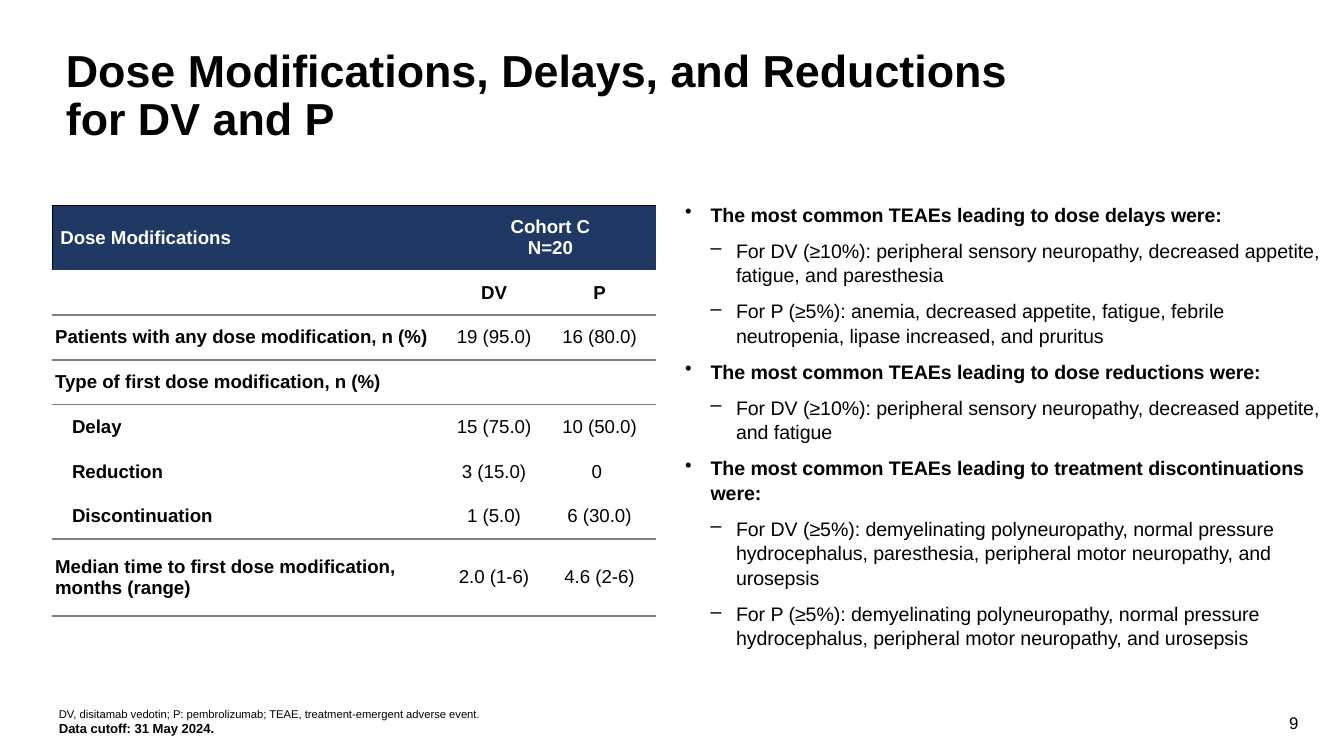
from dataclasses import dataclass

from lxml.etree import SubElement
from pptx import Presentation
from pptx.dml.color import RGBColor
from pptx.enum.text import MSO_ANCHOR, MSO_AUTO_SIZE, PP_ALIGN
from pptx.oxml.ns import qn
from pptx.util import Pt


@dataclass(frozen=True)
class Theme:
    """Colours, font and type sizes of the deck."""
    font: str = "Arial"
    text: str = "000000"
    light: str = "FFFFFF"
    header: str = "203864"
    rule: str = "808080"
    title_size: float = 24
    body_size: float = 10.5
    table_size: float = 10
    number_size: float = 9
    cutoff_size: float = 7
    note_size: float = 6


THEME = Theme()
PLAIN_STYLE = "{2D5ABB26-0587-4C30-8999-92F81FD0307C}"
TABLE_ROWS = [
    (" Dose Modifications", "Cohort C\nN=20", ""),
    ("", "DV", "P"),
    ("Patients with any dose modification, n (%)", "19 (95.0)", "16 (80.0)"),
    ("Type of first dose modification, n (%)", "", ""),
    ("Delay", "15 (75.0)", "10 (50.0)"),
    ("Reduction", "3 (15.0)", "0 "),
    ("Discontinuation", "1 (5.0)", "6 (30.0)"),
    ("Median time to first dose modification,\nmonths (range)", "2.0 (1-6)", "4.6 (2-6)"),
]
COLUMN_WIDTHS = (210.3, 52.6, 60.4)
ROW_HEIGHTS = (34.6, *[24] * 6, 41.2)
INDENTED_ROWS = (4, 5, 6)
RULED_ROWS = (1, 2, 6, 7)
FINDINGS = [
    ("The most common TEAEs leading to dose delays were:", [
        "For DV (≥10%): peripheral sensory neuropathy, decreased appetite, fatigue, and paresthesia",
        "For P (≥5%): anemia, decreased appetite, fatigue, febrile neutropenia, lipase increased, "
        "and pruritus",
    ]),
    ("The most common TEAEs leading to dose reductions were:", [
        "For DV (≥10%): peripheral sensory neuropathy, decreased appetite, and fatigue",
    ]),
    ("The most common TEAEs leading to treatment discontinuations were:", [
        "For DV (≥5%): demyelinating polyneuropathy, normal pressure hydrocephalus, paresthesia, "
        "peripheral motor neuropathy, and urosepsis",
        "For P (≥5%): demyelinating polyneuropathy, normal pressure hydrocephalus, "
        "peripheral motor neuropathy, and urosepsis",
    ]),
]


def write(para, text, *, size, color=THEME.text, bold=False, align=PP_ALIGN.LEFT):
    """Put formatted text into a paragraph."""
    para.text = text
    para.alignment = align
    for span in para.runs:
        span.font.name = THEME.font
        span.font.size = Pt(size)
        span.font.bold = bold
        span.font.color.rgb = RGBColor.from_string(color)


def next_para(frame):
    """Return the empty first paragraph of a frame, or a new one."""
    first = frame.paragraphs[0]
    return frame.add_paragraph() if first.runs else first


def add_box(page, left, top, width, height, anchor=MSO_ANCHOR.TOP):
    """Add a wrapping text box and return its text frame."""
    frame = page.shapes.add_textbox(Pt(left), Pt(top), Pt(width), Pt(height)).text_frame
    frame.word_wrap = True
    frame.vertical_anchor = anchor
    return frame


def set_title(page, text):
    """Place and fill the title placeholder."""
    title = page.shapes.title
    title.left, title.top, title.width, title.height = Pt(28.1), Pt(22.3), Pt(548), Pt(49.7)
    frame = title.text_frame
    frame.auto_size = MSO_AUTO_SIZE.NONE
    frame.vertical_anchor = MSO_ANCHOR.TOP
    write(frame.paragraphs[0], text, size=THEME.title_size, bold=True)
    frame.paragraphs[0].line_spacing = 0.9


def add_bullet(frame, text, *, level=0):
    """Add a bulleted paragraph at the given outline level."""
    para = next_para(frame)
    is_first = para is frame.paragraphs[0] or len(frame.paragraphs) == 1
    para.level = level
    properties = para._p.get_or_add_pPr()
    properties.set("marL", str(Pt(13.6 * (level + 1))))
    properties.set("indent", str(-Pt(13.6)))
    SubElement(properties, qn("a:buChar"), char="–" if level else "•")
    para.space_before = Pt(0 if is_first else 3)
    para.space_after = Pt(3)
    para.line_spacing = 1.05
    write(para, text, size=THEME.body_size, bold=level == 0)


def add_border(cell, side, color, width):
    """Draw one border of a cell; side is L, R, T or B."""
    line = SubElement(cell._tc.get_or_add_tcPr(), qn(f"a:ln{side}"), w=str(Pt(width)))
    SubElement(SubElement(line, qn("a:solidFill")), qn("a:srgbClr"), val=color)


def fill_cell(cell, text, row, column):
    """Write and format one table cell by its place in the grid."""
    is_header = row == 0
    cell.margin_left = cell.margin_right = Pt(1.5)
    cell.margin_top = cell.margin_bottom = 0
    cell.vertical_anchor = MSO_ANCHOR.MIDDLE
    if is_header:
        for side in ("LT", "T", "RT")[column]:
            add_border(cell, side, THEME.text, 0.5)
        cell.fill.solid()
        cell.fill.fore_color.rgb = RGBColor.from_string(THEME.header)
    else:
        if row - 1 in RULED_ROWS:
            add_border(cell, "T", THEME.rule, 1)
        if row in RULED_ROWS:
            add_border(cell, "B", THEME.rule, 1)
        cell.fill.background()
    lines = text.split("\n") if is_header else [text]
    for line in lines:
        para = next_para(cell.text_frame)
        write(para, line, size=THEME.table_size,
              color=THEME.light if is_header else THEME.text,
              bold=row < 2 or column == 0,
              align=PP_ALIGN.CENTER if column else PP_ALIGN.LEFT)
        if row in INDENTED_ROWS and column == 0:
            para._p.get_or_add_pPr().set("indent", str(Pt(9)))


def add_dose_table(page, left, top):
    """Add the dose modification table."""
    table = page.shapes.add_table(len(ROW_HEIGHTS), len(COLUMN_WIDTHS), Pt(left), Pt(top),
                                  Pt(sum(COLUMN_WIDTHS)), Pt(sum(ROW_HEIGHTS))).table
    table.first_row = table.horz_banding = False
    table._tbl.tblPr.find(qn("a:tableStyleId")).text = PLAIN_STYLE
    for column, width in zip(table.columns, COLUMN_WIDTHS):
        column.width = Pt(width)
    for row, height in zip(table.rows, ROW_HEIGHTS):
        row.height = Pt(height)
    table.cell(0, 1).merge(table.cell(0, 2))
    for row, texts in enumerate(TABLE_ROWS):
        for column, text in enumerate(texts):
            fill_cell(table.cell(row, column), text, row, column)


def main():
    """Build the deck and save it."""
    deck = Presentation()
    deck.slide_width, deck.slide_height = Pt(720), Pt(405)
    page = deck.slides.add_slide(deck.slide_layouts[5])
    set_title(page, "Dose Modifications, Delays, and Reductions for DV and P")
    add_dose_table(page, 28.1, 110.2)

    notes = add_box(page, 24.5, 383, 698, 15.1, MSO_ANCHOR.BOTTOM)
    write(next_para(notes), "DV, disitamab vedotin; P: pembrolizumab; TEAE, "
          "treatment-emergent adverse event.", size=THEME.note_size)
    write(next_para(notes), "Data cutoff: 31 May 2024.", size=THEME.cutoff_size, bold=True)

    findings = add_box(page, 360, 104.4, 358, 273)
    for heading, details in FINDINGS:
        add_bullet(findings, heading)
        for detail in details:
            add_bullet(findings, detail, level=1)

    number = add_box(page, 540.7, 376.6, 162, 21.6, MSO_ANCHOR.MIDDLE)
    write(next_para(number), "9", size=THEME.number_size, align=PP_ALIGN.RIGHT)
    deck.save("out.pptx")


if __name__ == "__main__":
    main()
